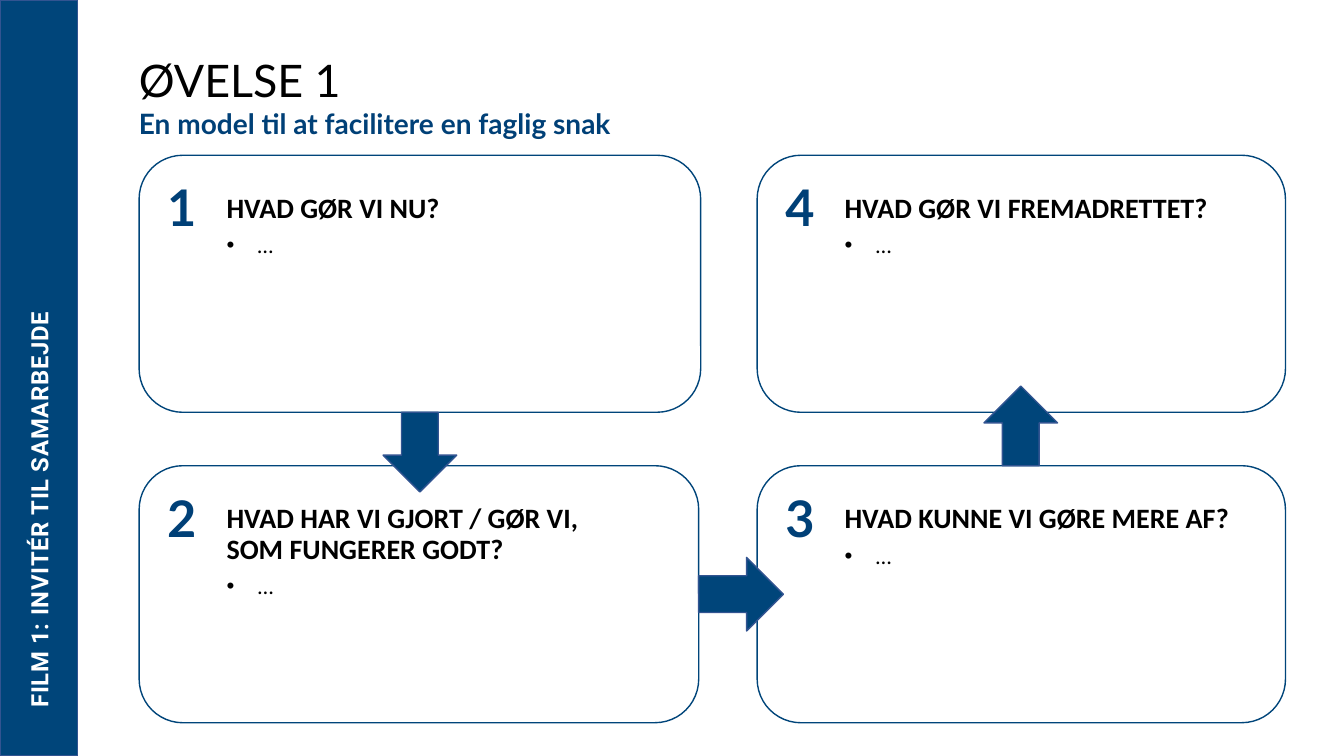
"""Build the exercise slide: four question boxes joined by arrows."""
from lxml import etree
from pptx import Presentation
from pptx.dml.color import RGBColor
from pptx.enum import shapes, text
from pptx.oxml import ns
from pptx.util import Inches, Pt

BLUE, NAVY, EDGE, WHITE, BLACK = "00457A", "004077", "325491", "FFFFFF", "000000"
MSO = shapes.MSO_SHAPE


def add_run(p, words, size, font, color, bold=False):
    r = p.add_run()
    r.text = words
    r.font.size, r.font.name, r.font.bold = Pt(size), font, bold
    r.font.color.rgb = RGBColor.from_string(color)
    return r


def add_shape(kind, x, y, w, h, fill, line):
    sp = s.shapes.add_shape(kind, Inches(x), Inches(y), Inches(w), Inches(h))
    sp.shadow.inherit = False
    sp.fill.solid()
    sp.fill.fore_color.rgb = RGBColor.from_string(fill)
    sp.line.color.rgb = RGBColor.from_string(line)
    sp.line.width = Pt(1)
    return sp


prs = Presentation()
prs.slide_width, prs.slide_height = Inches(13.33), Inches(7.5)
s = prs.slides.add_slide(prs.slide_layouts[6])

boxes = [
    (1.38, 1.54, 5.57, ["HVAD GØR VI NU?"]),
    (1.38, 4.62, 5.55, ["HVAD HAR VI GJORT / GØR VI, ", "SOM FUNGERER GODT?"]),
    (7.51, 4.62, 5.24, ["HVAD KUNNE VI GØRE MERE AF?"]),
    (7.51, 1.54, 5.24, ["HVAD GØR VI FREMADRETTET?"]),
]
for x, y, w, lines in boxes:
    sp = add_shape(MSO.ROUNDED_RECTANGLE, x, y, w, 2.55, WHITE, BLUE)
    sp.adjustments[0] = 0.17
    tf = sp.text_frame
    tf.word_wrap = True
    tf.vertical_anchor = text.MSO_ANCHOR.TOP
    tf.margin_left, tf.margin_top = Inches(0.74), Inches(0.26)
    tf.margin_right = tf.margin_bottom = Inches(0.26)
    heading, bullet = tf.paragraphs[0], tf.add_paragraph()
    for i, line in enumerate(lines):
        if i:
            heading.add_line_break()
        add_run(heading, line, 20, "Calibri", BLACK, True)
    pPr = bullet._p.get_or_add_pPr()
    pPr.set("marL", str(Inches(0.31)))
    pPr.set("indent", str(-Inches(0.31)))
    etree.SubElement(pPr, ns.qn("a:buFont")).set("typeface", "Arial")
    etree.SubElement(pPr, ns.qn("a:buChar")).set("char", "•")
    add_run(bullet, "…", 16, "Calibri", BLACK)
    for p in (heading, bullet):
        p.alignment = text.PP_ALIGN.LEFT
        p.line_spacing = 0.9
        p.space_after = Pt(7)

sidebar = add_shape(MSO.RECTANGLE, 0, 0, 0.77, 7.5, BLUE, EDGE)
tf = sidebar.text_frame
tf.vertical_anchor = text.MSO_ANCHOR.MIDDLE
tf._txBody.bodyPr.set("vert", "vert270")
p = tf.paragraphs[0]
p.alignment = text.PP_ALIGN.LEFT
p._p.get_or_add_pPr().set("marL", str(Inches(0.38)))
r = add_run(p, "FILM 1: INVITÉR TIL SAMARBEJDE", 17, "Roboto", WHITE, True)
r._r.get_or_add_rPr().set("spc", "50")

for kind, x, y, w, h in [
    (MSO.DOWN_ARROW, 3.8, 4.09, 0.73, 0.79),
    (MSO.UP_ARROW, 9.76, 3.83, 0.73, 0.79),
    (MSO.RIGHT_ARROW, 6.93, 5.53, 0.84, 0.73),
]:
    add_shape(kind, x, y, w, h, BLUE, EDGE)

tf = s.shapes.add_textbox(Inches(1.28), Inches(0.47), Inches(11.47), Inches(0.98)).text_frame
tf.word_wrap = True
add_run(tf.paragraphs[0], "ØVELSE 1", 32, "Lato", BLACK)
add_run(tf.add_paragraph(), "En model til at facilitere en faglig snak", 20, "Lato", NAVY, True)

for number, (x, y, w, lines) in enumerate(boxes, 1):
    sp = s.shapes.add_textbox(Inches(x + 0.18), Inches(y + 0.16), Inches(0.43), Inches(0.71))
    sp.text_frame.word_wrap = True
    add_run(sp.text_frame.paragraphs[0], str(number), 36, "Lato", NAVY, True)

prs.save("out.pptx")
